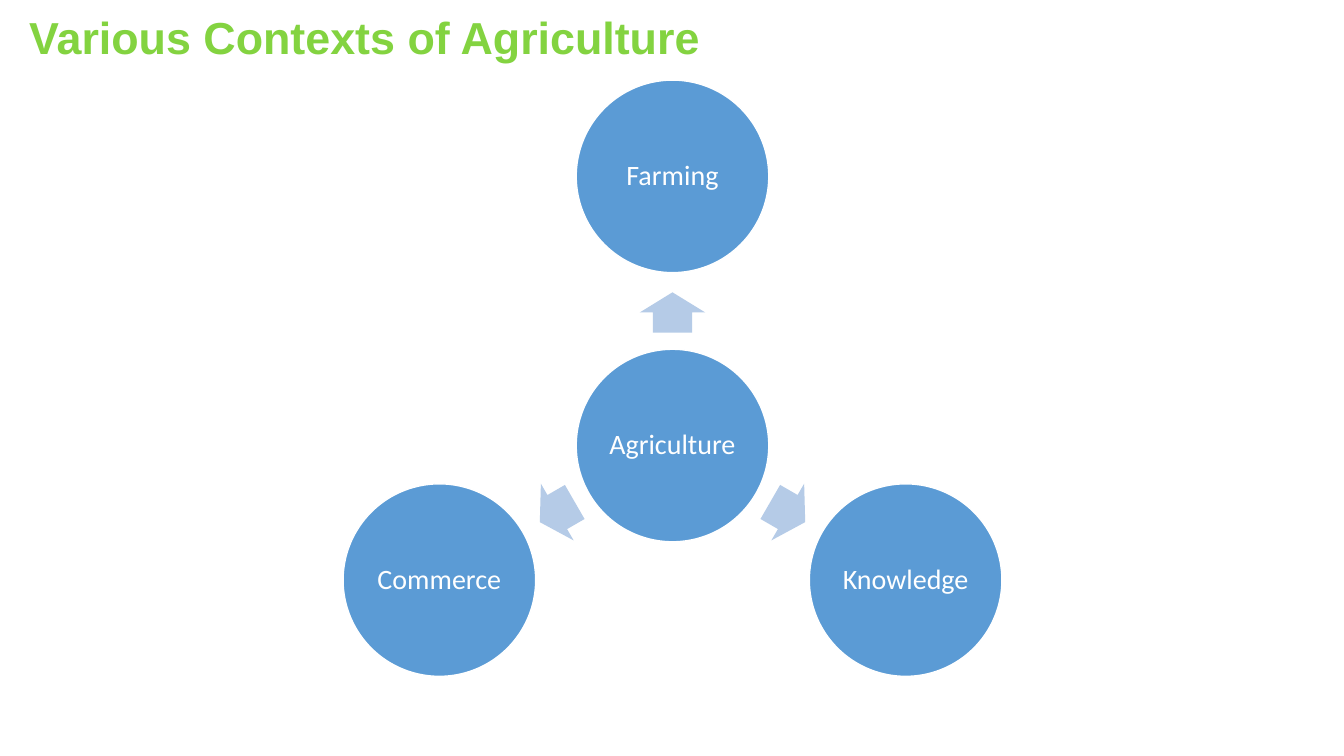
"""Build a slide with agriculture at the hub of its three contexts."""
import math
from dataclasses import dataclass

from pptx import Presentation, util as u
from pptx.dml.color import RGBColor
from pptx.enum import shapes, text


@dataclass(frozen=True)
class Theme:
    title: RGBColor = RGBColor.from_string("83D340")
    circle: RGBColor = RGBColor.from_string("5B9BD5")
    arrow: RGBColor = RGBColor.from_string("B5CBE7")
    white: RGBColor = RGBColor.from_string("FFFFFF")
    title_font: str = "Arial"
    label_font: str = "Calibri"
    title_size: u.Pt = u.Pt(32)
    label_size: u.Pt = u.Pt(20)


theme = Theme()
HUB_X, HUB_Y = 6.67, 4.42
CIRCLE_ORBIT, ARROW_ORBIT = 2.67, 1.32
DIAMETER = 1.91
ARROW_W, ARROW_H = 0.4, 0.65

prs = Presentation()
prs.slide_width, prs.slide_height = u.Inches(13.33), u.Inches(7.5)
s = prs.slides.add_slide(prs.slide_layouts[6])


def add_centred(kind, angle, orbit, width, height, color):
    """Place a filled shape on an orbit around the hub."""
    x = HUB_X + orbit * math.cos(math.radians(angle))
    y = HUB_Y + orbit * math.sin(math.radians(angle))
    sp = s.shapes.add_shape(kind, u.Inches(x - width / 2), u.Inches(y - height / 2),
                            u.Inches(width), u.Inches(height))
    sp.shadow.inherit = False
    sp.fill.solid()
    sp.fill.fore_color.rgb = color
    return sp


def write(tf, words, inset, font, size, color, bold=False):
    """Fill a text frame with one formatted paragraph."""
    tf.margin_left = tf.margin_right = tf.margin_top = tf.margin_bottom = u.Inches(inset)
    tf.word_wrap = True
    tf.text = words
    p = tf.paragraphs[0]
    p.line_spacing = 0.9
    r = p.runs[0]
    r.font.name, r.font.size, r.font.bold = font, size, bold
    r.font.color.rgb = color
    return p


title = s.shapes.add_textbox(u.Inches(0.29), u.Inches(0.16), u.Inches(7.73), u.Inches(0.48))
write(title.text_frame, "Various Contexts of Agriculture", 0,
      theme.title_font, theme.title_size, theme.title, bold=True)

contexts = [("Farming", 270), ("Knowledge", 30), ("Commerce", 150)]
circles = [("Agriculture", 0, 0)] + [(name, angle, CIRCLE_ORBIT) for name, angle in contexts]

for name, angle, orbit in circles:
    if orbit:
        arrow = add_centred(shapes.MSO_SHAPE.RIGHT_ARROW, angle, ARROW_ORBIT,
                            ARROW_W, ARROW_H, theme.arrow)
        arrow.adjustments[0], arrow.adjustments[1] = 0.6, 0.5
        arrow.rotation = angle
        arrow.line.fill.background()
    circle = add_centred(shapes.MSO_SHAPE.OVAL, angle, orbit, DIAMETER, DIAMETER, theme.circle)
    circle.line.color.rgb = theme.white
    circle.line.width = u.Pt(1)
    tf = circle.text_frame
    tf.vertical_anchor = text.MSO_ANCHOR.MIDDLE
    p = write(tf, name, 0.03, theme.label_font, theme.label_size, theme.white)
    p.alignment = text.PP_ALIGN.CENTER

prs.save("out.pptx")
